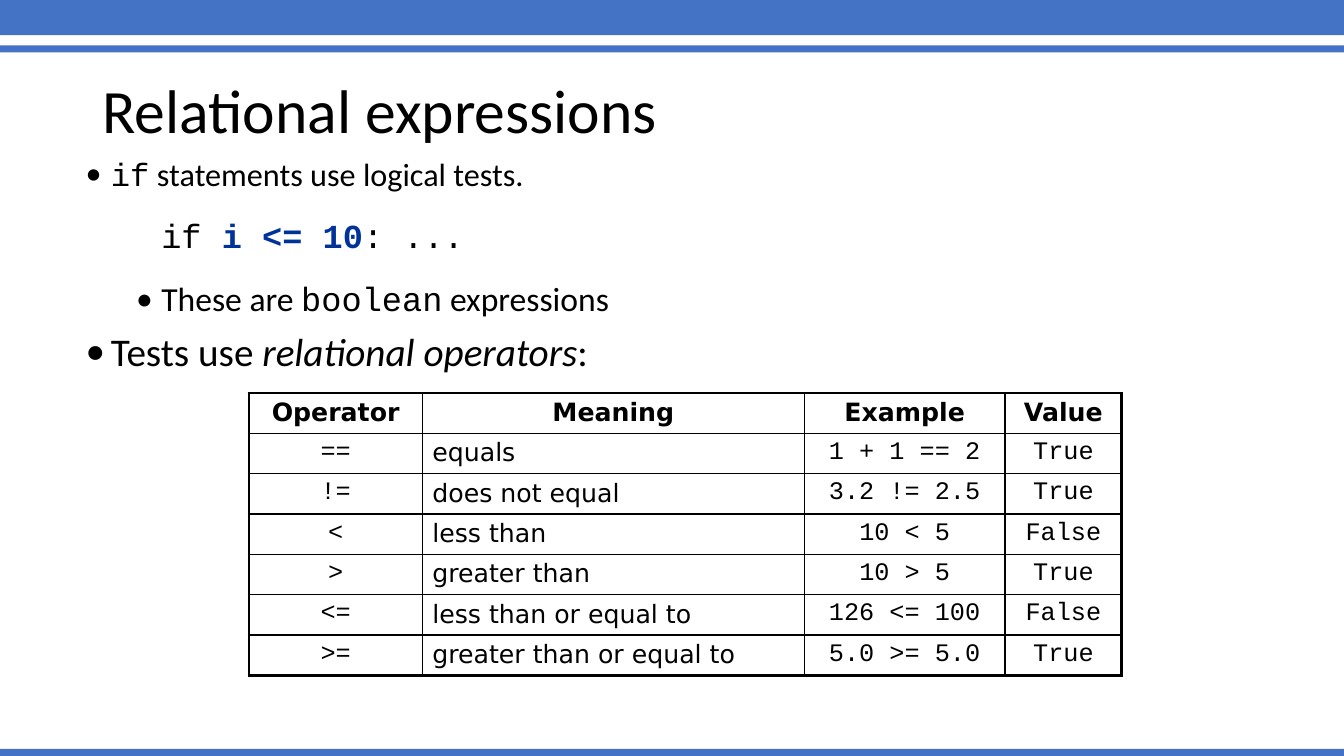
from dataclasses import dataclass

import lxml.etree
import pptx
import pptx.dml.color
import pptx.enum.shapes
import pptx.enum.text
import pptx.oxml.ns
import pptx.util

Pt = pptx.util.Pt
Align = pptx.enum.text.PP_ALIGN
Anchor = pptx.enum.text.MSO_ANCHOR
qn = pptx.oxml.ns.qn


@dataclass(frozen=True)
class Theme:
    ink: str = "000000"
    band: str = "4472C4"
    condition: str = "003399"
    prose: str = "Calibri"
    code: str = "Courier New"
    grid: str = "DejaVu Sans"
    heading: int = 44
    point: int = 28
    snippet: int = 24
    intro: int = 23
    cell: int = 18
    frame: float = 2.25
    rule: float = 1


class Deck:
    columns, rows = 160, 90

    def __init__(self, theme):
        self.theme = theme
        self.presentation = pptx.Presentation()
        self.presentation.slide_width = pptx.util.Inches(13.33)
        self.presentation.slide_height = pptx.util.Inches(7.5)
        self.slide = self.presentation.slides.add_slide(self.presentation.slide_layouts[1])

    def across(self, count):
        return round(self.presentation.slide_width * count / self.columns)

    def down(self, count):
        return round(self.presentation.slide_height * count / self.rows)

    def place(self, element, left, top, width, height):
        element.left, element.top = self.across(left), self.down(top)
        element.width, element.height = self.across(width), self.down(height)

    def style(self, font, size=None, name=None, color=None, bold=None, italic=None):
        if size:
            font.size = Pt(size)
        if name:
            font.name = name
        if color:
            font.color.rgb = pptx.dml.color.RGBColor.from_string(color)
        if bold is not None:
            font.bold = bold
        if italic is not None:
            font.italic = italic

    def band(self, top, height):
        stripe = self.slide.shapes.add_shape(
            pptx.enum.shapes.MSO_SHAPE.RECTANGLE,
            0, self.down(top), self.across(self.columns), self.down(height),
        )
        stripe.shadow.inherit = False
        stripe.fill.solid()
        stripe.fill.fore_color.rgb = pptx.dml.color.RGBColor.from_string(self.theme.band)
        stripe.line.fill.background()

    def title(self, wording, *area):
        heading = self.slide.shapes.title
        self.place(heading, *area)
        heading.text_frame.text = wording
        heading.text_frame.vertical_anchor = Anchor.MIDDLE
        heading.text_frame.auto_size = pptx.enum.text.MSO_AUTO_SIZE.NONE
        line = heading.text_frame.paragraphs[0]
        line.alignment = Align.LEFT
        line.line_spacing = 0.9
        self.style(line.font, self.theme.heading, self.theme.prose, self.theme.ink)

    def body(self, points, *area):
        outline = self.slide.placeholders[1]
        self.place(outline, *area)
        frame = outline.text_frame
        frame.auto_size = pptx.enum.text.MSO_AUTO_SIZE.NONE
        for index, point in enumerate(points):
            line = frame.paragraphs[0] if index == 0 else frame.add_paragraph()
            self.point(line, **point)

    def point(self, line, runs, size, before, level=0, name=None, bullet=True):
        line.level = level
        line.line_spacing = 0.9
        line.space_before = Pt(before)
        line.space_after = Pt(0)
        properties = line._p.get_or_add_pPr()
        properties.set("marL", str(Pt(18 + 36 * level)))
        properties.set("indent", str(Pt(-18 if bullet else 0)))
        if bullet:
            lxml.etree.SubElement(properties, qn("a:buFont"), typeface=self.theme.prose)
            lxml.etree.SubElement(properties, qn("a:buChar"), char="•")
        else:
            lxml.etree.SubElement(properties, qn("a:buNone"))
        self.style(line.font, size, name or self.theme.prose, self.theme.ink)
        for wording, changes in runs:
            run = line.add_run()
            run.text = wording
            self.style(run.font, **changes)

    def table(self, records, left, top, widths, row_height):
        last_row, last_column = len(records) - 1, len(widths) - 1
        grid = self.slide.shapes.add_table(
            len(records), len(widths), self.across(left), self.down(top),
            self.across(sum(widths)), self.down(row_height * len(records)),
        ).table
        grid.first_row = grid.horz_banding = False
        for column, width in zip(grid.columns, widths):
            column.width = self.across(width)
        for r, record in enumerate(records):
            grid.rows[r].height = self.down(row_height)
            for c, wording in enumerate(record):
                outer = {"L": c == 0, "R": c == last_column, "T": r == 0, "B": r == last_row}
                self.cell(grid.cell(r, c), wording, outer, header=r == 0, meaning=c == 1)

    def cell(self, cell, wording, outer, header, meaning):
        properties = cell._tc.get_or_add_tcPr()
        for side, framed in outer.items():
            weight = self.theme.frame if framed else self.theme.rule
            edge = lxml.etree.SubElement(properties, qn(f"a:ln{side}"), w=str(Pt(weight)))
            paint = lxml.etree.SubElement(edge, qn("a:solidFill"))
            lxml.etree.SubElement(paint, qn("a:srgbClr"), val=self.theme.ink)
        cell.fill.background()
        cell.text = wording
        line = cell.text_frame.paragraphs[0]
        line.alignment = Align.LEFT if meaning and not header else Align.CENTER
        family = self.theme.grid if header or meaning else self.theme.code
        self.style(line.font, self.theme.cell, family, self.theme.ink, bold=header)


def main():
    theme = Theme()
    deck = Deck(theme)
    code = {"name": theme.code}

    for top, height in ((0, 4.2), (5.4, 0.84), (89.16, 0.84)):
        deck.band(top, height)

    deck.title("Relational expressions", 11, 4.8, 138, 17.4)
    deck.body(
        [
            {"runs": [("if", code), (" statements use logical tests.", {})],
             "size": theme.intro, "before": 10},
            {"runs": [("if ", {}),
                      ("i <= 10", {"color": theme.condition, "bold": True}),
                      (": ...", {})],
             "size": theme.snippet, "before": 19, "level": 1,
             "name": theme.code, "bullet": False},
            {"runs": [("These are ", {}), ("boolean", code), (" expressions", {})],
             "size": theme.snippet, "before": 19, "level": 1},
            {"runs": [("Tests use ", {}),
                      ("relational operators", {"italic": True}),
                      (":", {})],
             "size": theme.point, "before": 10},
        ],
        9, 18.24, 138, 57.12,
    )
    deck.table(
        [
            ("Operator", "Meaning", "Example", "Value"),
            ("==", "equals", "1 + 1 == 2", "True"),
            ("!=", "does not equal", "3.2 != 2.5", "True"),
            ("<", "less than", "10 < 5", "False"),
            (">", "greater than", "10 > 5", "True"),
            ("<=", "less than or equal to", "126 <= 100", "False"),
            (">=", "greater than or equal to", "5.0 >= 5.0", "True"),
        ],
        29.64, 46.8, (20.64, 45.48, 23.88, 13.92), 4.8,
    )
    deck.presentation.save("out.pptx")


if __name__ == "__main__":
    main()
